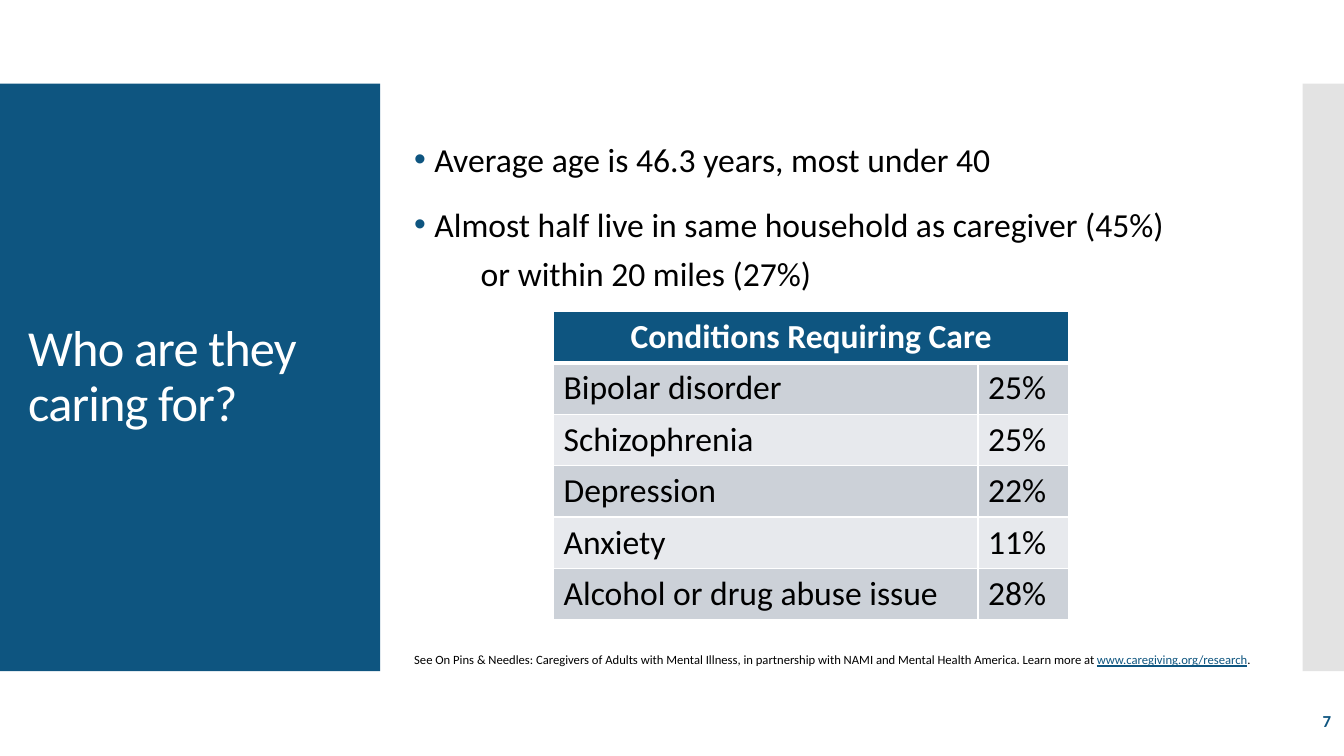
from lxml import etree
from pptx import Presentation
from pptx.dml.color import RGBColor
from pptx.enum.shapes import MSO_SHAPE
from pptx.enum.text import MSO_ANCHOR, PP_ALIGN
from pptx.oxml.ns import qn
from pptx.util import Inches, Pt

RECTANGLE = MSO_SHAPE.RECTANGLE
TOP, MIDDLE = MSO_ANCHOR.TOP, MSO_ANCHOR.MIDDLE
LEFT, CENTER, RIGHT = PP_ALIGN.LEFT, PP_ALIGN.CENTER, PP_ALIGN.RIGHT

BLUE = RGBColor(0x0E, 0x55, 0x80)
GREY = RGBColor(0xC8, 0xC8, 0xC8)
BAND_DARK = RGBColor(0xCC, 0xD1, 0xD8)
BAND_LIGHT = RGBColor(0xE7, 0xE9, 0xED)
WHITE = RGBColor(0xFF, 0xFF, 0xFF)
BLACK = RGBColor(0, 0, 0)


def add_run(paragraph, text, size, color, **extra):
    run = paragraph.add_run()
    run.text = text
    run.font.color.rgb = color
    for name, value in {"name": "Calibri", "size": Pt(size), **extra}.items():
        setattr(run.font, name, value)


def add_text_frame(left, top, width, height, anchor):
    box = slide.shapes.add_textbox(Inches(left), Inches(top), Inches(width), Inches(height))
    frame = box.text_frame
    frame.word_wrap = True
    frame.vertical_anchor = anchor
    return frame


prs = Presentation()
prs.slide_width, prs.slide_height = Inches(13.33), Inches(7.5)
slide = prs.slides.add_slide(prs.slide_layouts[5])
title = slide.shapes.title

for left, width, color in [(0, 3.77, BLUE), (12.92, 0.41, GREY)]:
    panel = slide.shapes.add_shape(RECTANGLE, Inches(left), Inches(0.83), Inches(width), Inches(5.83))
    panel.shadow.inherit = False
    panel.fill.solid()
    panel.fill.fore_color.rgb = color
    panel.line.fill.background()
    title.element.addprevious(panel.element)
panel_color = panel.element.spPr.find(qn("a:solidFill"))[0]
etree.SubElement(panel_color, qn("a:alpha"), val="50000")

title_place = {"left": 0.18, "top": 1.23, "width": 3.37, "height": 5.03}
for name, value in title_place.items():
    setattr(title, name, Inches(value))
title.text_frame.vertical_anchor = MIDDLE
heading = title.text_frame.paragraphs[0]
heading.alignment = LEFT
heading.line_spacing = 0.9
add_run(heading, "Who are they caring for?", 36, WHITE)
title.element.find(".//" + qn("a:rPr")).set("spc", "-60")

facts = add_text_frame(4.01, 0.94, 7.75, 5.6, TOP)
facts.margin_top = Inches(0.36)
fact_lines = [
    ("Average age is 46.3 years, most under 40", True, 12),
    ("Almost half live in same household as caregiver (45%)", True, 0),
    ("or within 20 miles (27%)", False, 0),
]
for index, (text, bulleted, space_after) in enumerate(fact_lines):
    fact = facts.add_paragraph() if index else facts.paragraphs[0]
    fact.line_spacing = 1.2
    fact.space_after = Pt(space_after)
    properties = fact._p.get_or_add_pPr()
    properties.set("marL", str(Inches(0.2 if bulleted else 0.66)))
    if bulleted:
        properties.set("indent", str(Inches(-0.2)))
        bullet_color = etree.SubElement(properties, qn("a:buClr"))
        etree.SubElement(bullet_color, qn("a:srgbClr"), val=str(BLUE))
        etree.SubElement(properties, qn("a:buFont"), typeface="Arial")
        etree.SubElement(properties, qn("a:buChar"), char="•")
    add_run(fact, text, 24, BLACK)

page_number = add_text_frame(11.63, 6.95, 1.67, 0.4, MIDDLE).paragraphs[0]
page_number.alignment = RIGHT
add_run(page_number, "7", 12, BLUE, bold=True)

conditions = [
    ("Conditions Requiring Care", ""),
    ("Bipolar disorder", "25%"),
    ("Schizophrenia", "25%"),
    ("Depression", "22%"),
    ("Anxiety", "11%"),
    ("Alcohol or drug abuse issue", "28%"),
]
table = slide.shapes.add_table(
    len(conditions), 2, Inches(5.49), Inches(3.09), Inches(5.11), Inches(3.06)
).table
table.columns[0].width, table.columns[1].width = Inches(4.21), Inches(0.9)
table.cell(0, 0).merge(table.cell(0, 1))
for row, condition in enumerate(conditions):
    is_header = row == 0
    for column, text in enumerate(condition):
        cell = table.cell(row, column)
        cell_properties = cell._tc.get_or_add_tcPr()
        for side in "LRTB":
            thick = (row, side) in [(0, "B"), (1, "T")]
            border = etree.SubElement(cell_properties, qn("a:ln" + side), w=str(Pt(3 if thick else 1)))
            border_fill = etree.SubElement(border, qn("a:solidFill"))
            etree.SubElement(border_fill, qn("a:srgbClr"), val=str(WHITE))
        cell.fill.solid()
        cell.fill.fore_color.rgb = BLUE if is_header else BAND_DARK if row % 2 else BAND_LIGHT
        if text:
            entry = cell.text_frame.paragraphs[0]
            entry.alignment = CENTER if is_header else LEFT
            add_run(entry, text, 24, WHITE if is_header else BLACK, bold=is_header)

reference = add_text_frame(4.01, 6.42, 8.69, 0.25, TOP).paragraphs[0]
add_run(
    reference,
    "See On Pins & Needles: Caregivers of Adults with Mental Illness, in partnership with "
    "NAMI and Mental Health America. Learn more at ",
    9,
    BLACK,
)
add_run(reference, "www.caregiving.org/research", 9, BLUE, underline=True)
add_run(reference, ".", 9, BLACK)

prs.save("out.pptx")
